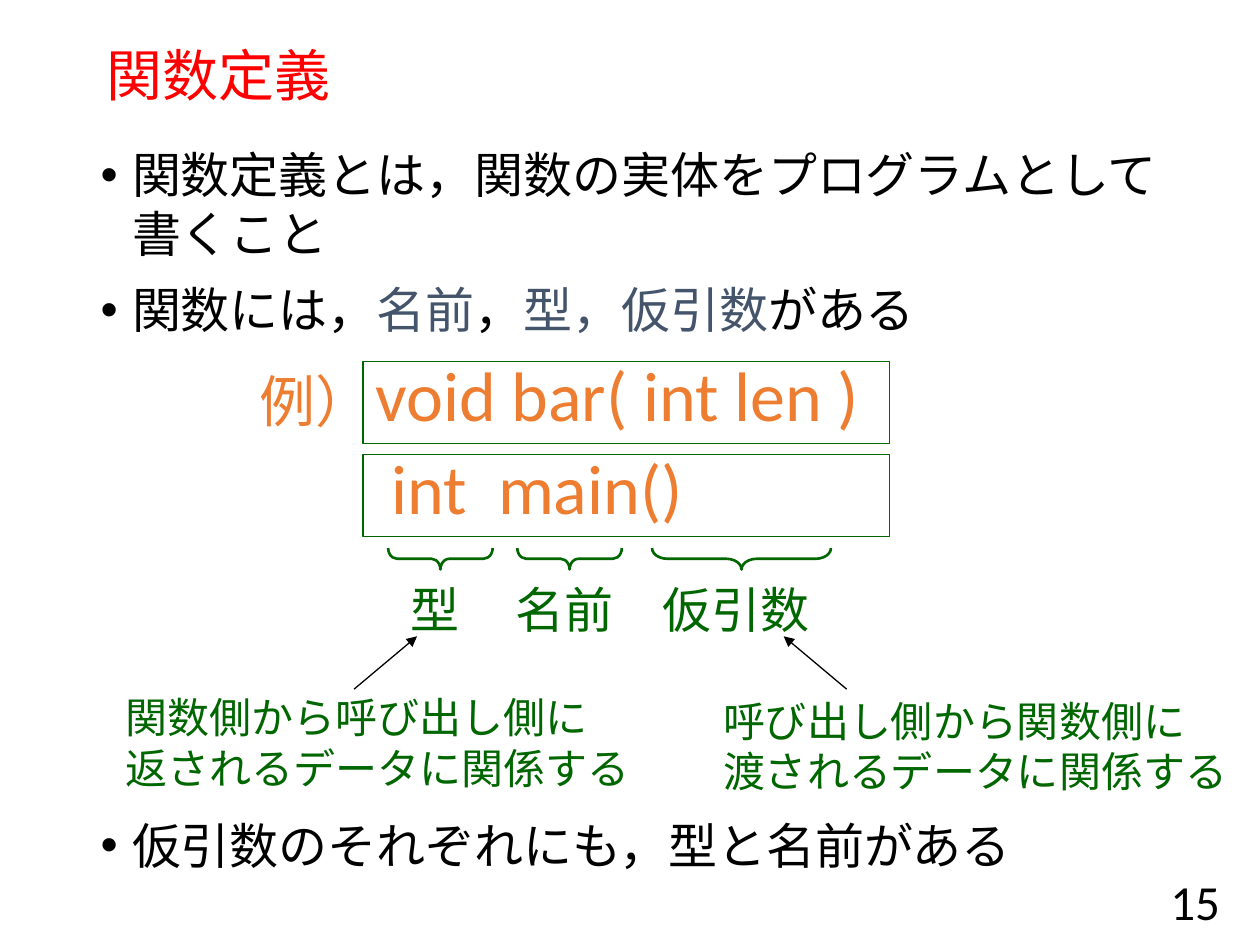
from pptx import Presentation
from pptx.dml import color
from pptx.enum import shapes, text
from pptx.oxml import ns
from pptx.util import Inches, Pt
from lxml import etree

BLACK, RED, SLATE = "000000", "FF0000", "44546A"
GREEN, ORANGE = "006600", "ED7D31"


def rgb(value):
    return color.RGBColor.from_string(value)


def add_child(parent, tag, **attributes):
    return etree.SubElement(parent, ns.qn(tag), attributes)


def add_run(paragraph, wording, size, hue, font="Calibri"):
    run = paragraph.add_run()
    run.text = wording
    run.font.size = Pt(size)
    run.font.name = font
    run.font.color.rgb = rgb(hue)


def add_text(slide, box, lines, size, hue, font="Calibri", wrap=False,
             anchor=text.MSO_ANCHOR.TOP, align=text.PP_ALIGN.LEFT, spacing=None):
    frame = slide.shapes.add_textbox(*map(Inches, box)).text_frame
    frame.word_wrap = wrap
    frame.vertical_anchor = anchor
    for index, line in enumerate(lines):
        paragraph = frame.add_paragraph() if index else frame.paragraphs[0]
        paragraph.alignment = align
        paragraph.line_spacing = spacing
        add_run(paragraph, line, size, hue, font)


def add_bullets(slide, box, items):
    frame = slide.shapes.add_textbox(*map(Inches, box)).text_frame
    frame.word_wrap = True
    for index, pieces in enumerate(items):
        paragraph = frame.add_paragraph() if index else frame.paragraphs[0]
        properties = paragraph._p.get_or_add_pPr()
        properties.set("marL", str(Inches(0.25)))
        properties.set("indent", str(Inches(-0.25)))
        add_child(properties, "a:buFont", typeface="Arial")
        add_child(properties, "a:buChar", char="•")
        if index:
            paragraph.space_before = Pt(10)
        for wording, hue in pieces:
            add_run(paragraph, wording, 28, hue, "Arial")


def add_outline(slide, preset, box, width):
    shape = slide.shapes.add_shape(preset, *map(Inches, box))
    shape.shadow.inherit = False
    shape.fill.background()
    shape.line.color.rgb = rgb(GREEN)
    shape.line.width = Pt(width)
    return shape


def add_code(slide, box, code):
    frame = add_outline(slide, shapes.MSO_SHAPE.RECTANGLE, box, 0.75).text_frame
    frame.word_wrap = True
    frame.vertical_anchor = text.MSO_ANCHOR.TOP
    paragraph = frame.paragraphs[0]
    paragraph.alignment = text.PP_ALIGN.LEFT
    paragraph.line_spacing = 0.8
    add_run(paragraph, code, 40, ORANGE)


def add_part(slide, box, brace_length, label):
    left, top, width, height = box
    depth = 0.17
    middle = left + width / 2 + 0.04
    brace_box = (middle - depth / 2, top + (depth - brace_length) / 2, depth, brace_length)
    brace = add_outline(slide, shapes.MSO_SHAPE.RIGHT_BRACE, brace_box, 1.5)
    brace.rotation = 90
    brace.adjustments[0] = brace_length / 2
    add_text(slide, (left, top + 0.2, width, height - 0.2), [label], 28, GREEN)


def add_arrow(slide, start, end):
    arrow = slide.shapes.add_connector(
        shapes.MSO_CONNECTOR.STRAIGHT, *map(Inches, start + end))
    arrow.line.color.rgb = rgb(BLACK)
    arrow.line.width = Pt(0.75)
    add_child(arrow.line._get_or_add_ln(), "a:tailEnd", type="triangle")
    add_child(arrow._element.spPr, "a:effectLst")


def add_example(slide, box):
    left, top, width, height = box
    add_text(slide, (left, top - 0.01, 1.1, 0.64), ["例）"], 32, ORANGE)
    for row, code in enumerate(["void bar( int len )", " int  main()"]):
        add_code(slide, (left + 0.92, top + 0.74 * row, width - 0.92, 0.65), code)
    parts = [(1.2, 0.59, 0.83, "型"), (2.03, 0.98, 0.83, "名前"), (3.2, 1.37, 1.42, "仮引数")]
    for offset, part_width, brace_length, label in parts:
        add_part(slide, (left + offset, top + 1.48, part_width, height - 1.48),
                 brace_length, label)


def add_note(slide, box, lines, arrow_start, arrow_shift):
    add_text(slide, box, lines, 24, GREEN)
    x, y = arrow_start
    add_arrow(slide, arrow_start, (x + arrow_shift, y - 0.42))


def main():
    deck = Presentation()
    deck.slide_width, deck.slide_height = Inches(10), Inches(7.5)
    slide = deck.slides.add_slide(deck.slide_layouts[6])
    add_text(slide, (0.75, 0.16, 8.5, 0.92), ["関数定義"], 32, RED, "Arial", True,
             text.MSO_ANCHOR.MIDDLE, spacing=0.9)
    add_bullets(slide, (0.7, 1.1, 8.96, 1.7), [
        [("関数定義とは，関数の実体をプログラムとして書くこと", BLACK)],
        [("関数には，", BLACK), ("名前", SLATE), ("，", BLACK),
         ("型，仮引数", SLATE), ("がある", BLACK)],
    ])
    add_example(slide, (1.96, 2.87, 5.1, 2.25))
    add_note(slide, (0.9, 5.44, 4.24, 0.91),
             ["関数側から呼び出し側に", "返されるデータに関係する"], (2.81, 5.47), 0.5)
    add_note(slide, (5.64, 5.47, 4.24, 0.91),
             ["呼び出し側から関数側に", "渡されるデータに関係する"], (6.72, 5.47), -0.5)
    add_bullets(slide, (0.7, 6.42, 8.96, 0.57),
                [[("仮引数のそれぞれにも，型と名前がある", BLACK)]])
    add_text(slide, (7.53, 6.95, 2.25, 0.4), ["15"], 28, BLACK, wrap=True,
             anchor=text.MSO_ANCHOR.MIDDLE, align=text.PP_ALIGN.RIGHT)
    deck.save("out.pptx")


if __name__ == "__main__":
    main()
